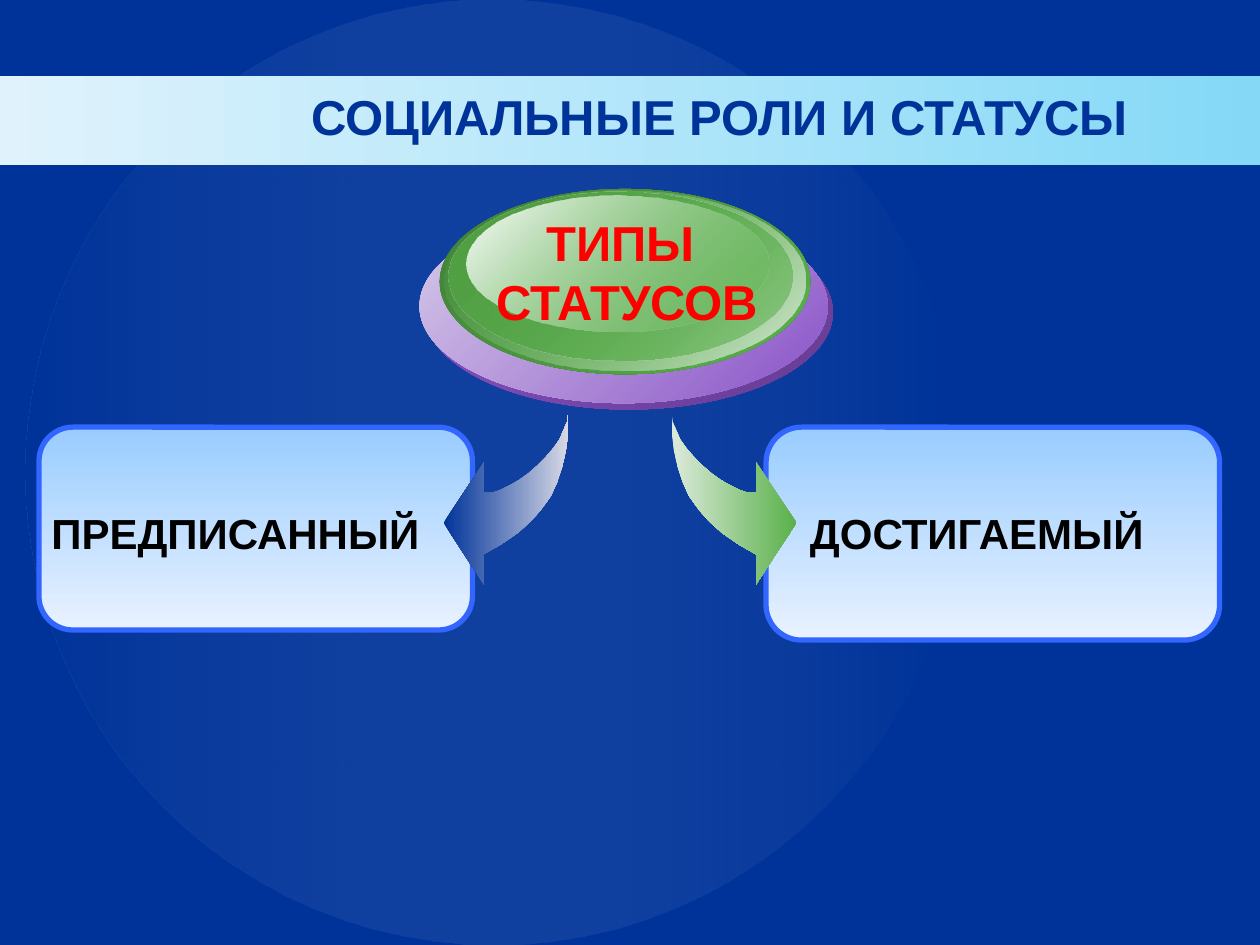
"""Build a slide on social roles and the two types of status."""
from dataclasses import dataclass
from typing import Optional

from lxml import etree
from pptx import Presentation
from pptx.dml.color import RGBColor
from pptx.enum.shapes import MSO_SHAPE
from pptx.enum.text import MSO_ANCHOR, PP_ALIGN
from pptx.oxml.ns import qn
from pptx.util import Inches, Pt

OVAL, RECT, ROUND = MSO_SHAPE.OVAL, MSO_SHAPE.RECTANGLE, MSO_SHAPE.ROUNDED_RECTANGLE
MIDDLE = MSO_ANCHOR.MIDDLE
LEFT, CENTER = PP_ALIGN.LEFT, PP_ALIGN.CENTER


@dataclass(frozen=True)
class Theme:
    """Colours, font and type sizes."""
    navy: str = "003399"
    white: str = "FFFFFF"
    black: str = "000000"
    red: str = "FF0000"
    edge: str = "3366FF"
    green: str = "5AB14B"
    font: str = "Arial"
    head: int = 28
    label: int = 24


@dataclass(frozen=True)
class Box:
    """A place and size in inches."""
    left: float
    top: float
    width: float
    height: float

    def emu(self) -> tuple:
        """Return the four lengths."""
        return tuple(map(Inches, (self.left, self.top, self.width, self.height)))


@dataclass(frozen=True)
class Blend:
    """A two-colour gradient with opacity in percent."""
    start: str
    end: str
    angle: int = 0
    alphas: tuple = (100, 100)


@dataclass(frozen=True)
class Card:
    """A panel with its label."""
    panel: Box
    label: Box
    text: str


THEME = Theme()
HALO = Blend(THEME.navy, THEME.white, 0, (27, 0))
BAND = Blend("E0F3FC", "85D9F7")
PANEL = Blend("99CCFF", "E9F2FF", 90)
CARDS = (
    Card(Box(6.08, 3.39, 3.6, 1.69), Box(6.33, 3.98, 3.28, 0.5), "ДОСТИГАЕМЫЙ"),
    Card(Box(0.31, 3.39, 3.44, 1.61), Box(0.31, 3.98, 3.27, 0.5), "ПРЕДПИСАННЫЙ"),
)
RINGS = (
    (Box(3.37, 1.71, 3.24, 1.54), Blend("8A52C8", "653C92", 45)),
    (Box(3.33, 1.66, 3.24, 1.54), Blend("D6CBE9", "8A52C8", 45)),
    (Box(3.49, 1.5, 2.94, 1.47), Blend("407F36", THEME.green, 45)),
    (Box(3.53, 1.51, 2.86, 1.43), Blend(THEME.green, "D8E8D7", 45, (0, 100))),
    (Box(3.56, 1.52, 2.73, 1.34), Blend("51A044", THEME.green, 45, (100, 48))),
    (Box(3.7, 1.55, 2.4, 1.08), Blend(THEME.white, THEME.green, 45, (100, 38))),
)
UNIT = Inches(0.01)
MIRROR = 984
ARROW = (
    (451, 328), (451, 343), (449, 358), (446, 371), (442, 383), (437, 394),
    (429, 405), (421, 414), (411, 423), (398, 432), (384, 440), (384, 464),
    (352, 415), (384, 367), (384, 391), (391, 391), (397, 389), (405, 385),
    (412, 381), (419, 376), (426, 370), (433, 363), (439, 356), (444, 349),
    (447, 342), (450, 335),
)


def paint(shape, blend: Blend, edge: Optional[str] = None) -> None:
    """Set the gradient and outline of a shape."""
    shape.shadow.inherit = False
    fill = shape.fill
    fill.gradient()
    fill.gradient_angle = -blend.angle % 360
    for stop, tint in zip(fill.gradient_stops, (blend.start, blend.end)):
        stop.color.rgb = RGBColor.from_string(tint)
    tints = list(shape._element.spPr.iter(qn("a:srgbClr")))
    for tint, alpha in zip(tints, blend.alphas):
        if alpha < 100:
            etree.SubElement(tint, qn("a:alpha"), val=str(alpha * 1000))
    if edge:
        shape.line.color.rgb = RGBColor.from_string(edge)
        shape.line.width = Pt(3)
    else:
        shape.line.fill.background()


def draw(shapes, kind, box: Box, blend: Blend, edge: Optional[str] = None) -> None:
    """Add a preset shape with a gradient."""
    paint(shapes.add_shape(kind, *box.emu()), blend, edge)


def arrow(shapes, points, blend: Blend) -> None:
    """Add a curved arrow through the points."""
    path = shapes.build_freeform(*points[0], scale=UNIT)
    path.add_line_segments(points[1:], close=True)
    paint(path.convert_to_shape(), blend)


def write(frame, lines, size: int, tint: str, align) -> None:
    """Fill a text frame with bold lines."""
    frame.text = "\n".join(lines)
    for para in frame.paragraphs:
        para.alignment = align
        font = para.font
        font.name, font.size, font.bold = THEME.font, Pt(size), True
        font.color.rgb = RGBColor.from_string(tint)


def label(shapes, box: Box, lines, size: int, tint: str, align, wrap=True) -> None:
    """Add a text box."""
    frame = shapes.add_textbox(*box.emu()).text_frame
    frame.word_wrap = wrap
    write(frame, lines, size, tint, align)


def title(slide, box: Box, text: str) -> None:
    """Place and format the title above the band."""
    shape = slide.shapes.title
    shape.left, shape.top, shape.width, shape.height = box.emu()
    slide.shapes._spTree.append(shape._element)
    frame = shape.text_frame
    frame.vertical_anchor = MIDDLE
    frame.margin_bottom = Inches(0.32)
    write(frame, [text], THEME.head, THEME.navy, CENTER)


def main() -> None:
    """Build and save the slide."""
    deck = Presentation()
    deck.slide_width, deck.slide_height = Inches(10), Inches(7.5)
    slide = deck.slides.add_slide(deck.slide_layouts[5])
    shapes = slide.shapes
    ground = slide.background.fill
    ground.solid()
    ground.fore_color.rgb = RGBColor.from_string(THEME.navy)

    draw(shapes, OVAL, Box(0.2, 0, 7.44, 7.5), HALO)
    draw(shapes, RECT, Box(0, 0.6, 10, 0.71), BAND)
    title(slide, Box(2.25, 0.63, 6.92, 0.85), "СОЦИАЛЬНЫЕ РОЛИ И СТАТУСЫ")

    for card in CARDS:
        draw(shapes, ROUND, card.panel, PANEL, THEME.edge)
        label(shapes, card.label, [card.text], THEME.label, THEME.black, LEFT)

    arrow(shapes, ARROW, Blend(THEME.navy, "D8D9E5"))
    flipped = [(MIRROR - x, y) for x, y in ARROW]
    arrow(shapes, flipped, Blend("DCEADB", THEME.green))

    group = shapes.add_group_shape().shapes
    for box, blend in RINGS:
        draw(group, OVAL, box, blend)
    label(shapes, Box(3.83, 1.64, 2.3, 1.04), ["ТИПЫ ", "СТАТУСОВ"],
          THEME.head, THEME.red, CENTER, wrap=False)
    deck.save("out.pptx")


if __name__ == "__main__":
    main()
